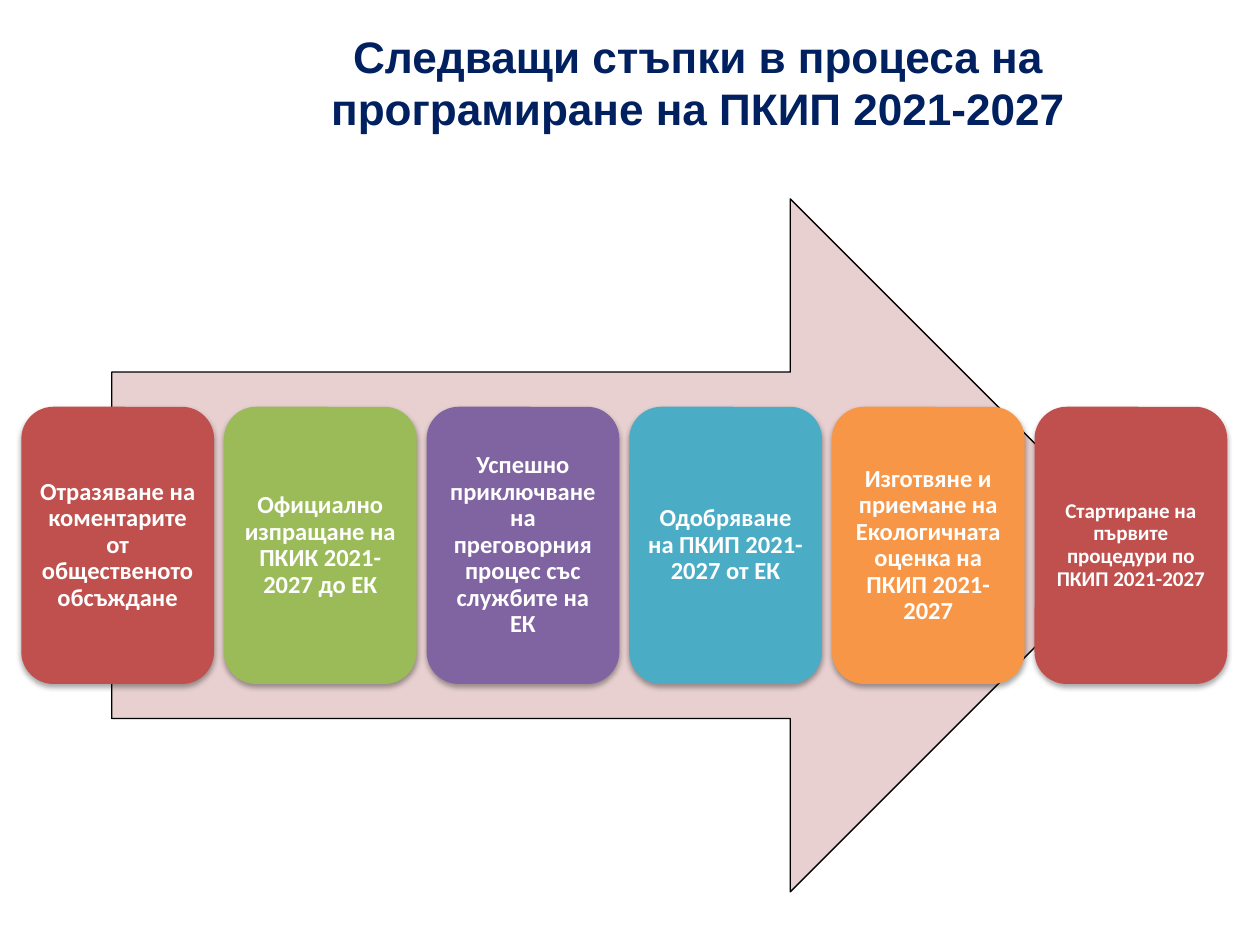
from lxml import etree
from pptx import Presentation
from pptx import util as u
from pptx.dml.color import RGBColor
from pptx.enum import shapes, text
from pptx.oxml import ns

HUES = {
    "navy": "002060", "white": "FFFFFF", "black": "000000", "blush": "E8D0D0",
    "red": "C0504D", "green": "9BBB59", "plum": "8064A2",
    "teal": "4BACC6", "amber": "F79646",
}
STEPS = [
    ("Отразяване на коментарите от общественото обсъждане", "red", 14),
    ("Официално изпращане на ПКИК 2021-2027 до ЕК", "green", 14),
    ("Успешно приключване на преговорния процес със службите на ЕК", "plum", 14),
    ("Одобряване на ПКИП 2021-2027 от ЕК", "teal", 14),
    ("Изготвяне и приемане на Екологичната оценка на ПКИП 2021-2027", "amber", 14),
    ("Стартиране на първите процедури по ПКИП 2021-2027", "red", 12),
]


def hue(name):
    """Return the colour stored under a name."""
    return RGBColor.from_string(HUES[name])


def place(item, box):
    """Move an item to a box of left, top, width and height in cm."""
    item.left, item.top, item.width, item.height = map(u.Cm, box)


def style(par, face, size, tint):
    """Centre a paragraph and set its bold font."""
    par.alignment = text.PP_ALIGN.CENTER
    par.font.name, par.font.size, par.font.bold = face, u.Pt(size), True
    par.font.color.rgb = hue(tint)


def shade(card):
    """Give a card a soft shadow straight below it."""
    card.shadow.inherit = False
    glow = etree.SubElement(
        card._element.spPr.find(ns.qn("a:effectLst")), ns.qn("a:outerShdw"),
        blurRad=str(u.Pt(3.1)), dist=str(u.Pt(1.8)), dir="5400000", rotWithShape="0")
    tint = etree.SubElement(glow, ns.qn("a:srgbClr"), val=HUES["black"])
    etree.SubElement(tint, ns.qn("a:alpha"), val="35000")


def add_title(slide, box, words):
    """Fill the title placeholder and place it in the box."""
    title = slide.shapes.title
    place(title, box)
    frame = title.text_frame
    frame.text = words
    frame.auto_size = text.MSO_AUTO_SIZE.NONE
    frame.vertical_anchor = text.MSO_ANCHOR.MIDDLE
    style(frame.paragraphs[0], "Arial", 25.2, "navy")


def add_card(slide, box, words, tint, size):
    """Draw one rounded step card in the box."""
    card = slide.shapes.add_shape(
        shapes.MSO_SHAPE.ROUNDED_RECTANGLE, *map(u.Cm, box))
    card.fill.solid()
    card.fill.fore_color.rgb = hue(tint)
    card.line.fill.background()
    shade(card)
    frame = card.text_frame
    frame.word_wrap = True
    frame.vertical_anchor = text.MSO_ANCHOR.MIDDLE
    inset = u.Pt(size * 0.3)
    frame.margin_left = frame.margin_right = inset
    frame.margin_top = frame.margin_bottom = inset
    frame.text = words
    par = frame.paragraphs[0]
    par.line_spacing = 0.9
    style(par, "Calibri", size, "white")


def add_flow(slide, box, steps, gap=0.2):
    """Draw a broad arrow in the box with a row of step cards across it."""
    left, top, width, height = box
    arrow = slide.shapes.add_shape(
        shapes.MSO_SHAPE.RIGHT_ARROW, u.Cm(left + 0.075 * width), u.Cm(top),
        u.Cm(0.85 * width), u.Cm(height))
    arrow.fill.solid()
    arrow.fill.fore_color.rgb = hue("blush")
    arrow.line.color.rgb = hue("black")
    arrow.line.width = u.Pt(0.75)
    arrow.shadow.inherit = False
    wide = (width - gap * (len(steps) - 1)) / len(steps)
    for i, step in enumerate(steps):
        spot = (left + i * (wide + gap), top + 0.3 * height, wide, 0.4 * height)
        add_card(slide, spot, *step)


def main():
    """Build the slide and save it."""
    deck = Presentation()
    deck.slide_width, deck.slide_height = u.Cm(25.4), u.Cm(19.05)
    slide = deck.slides.add_slide(deck.slide_layouts[5])
    add_title(slide, (3.81, 0.76, 20.52, 1.78),
              "Следващи стъпки в процеса на програмиране на ПКИП 2021-2027")
    add_flow(slide, (0.43, 4.01, 24.31, 13.97), STEPS)
    deck.save("out.pptx")


if __name__ == "__main__":
    main()
